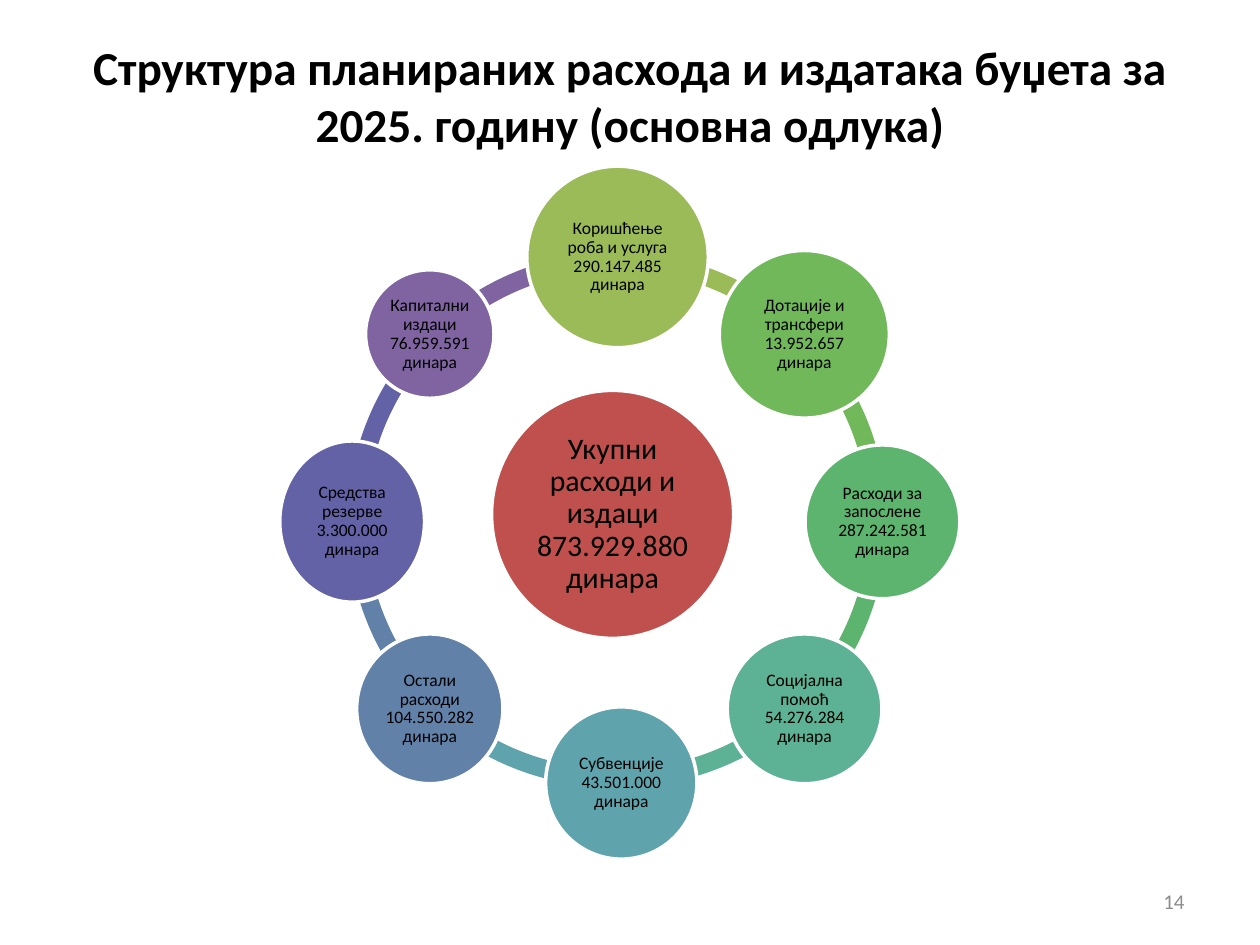
"""Build the slide with the ring of planned budget expenditures."""
from dataclasses import dataclass

from pptx import Presentation
from pptx.dml.color import RGBColor
from pptx.enum.shapes import MSO_SHAPE
from pptx.enum.text import MSO_ANCHOR, PP_ALIGN
from pptx.util import Cm, Pt

ELLIPSE = MSO_SHAPE.OVAL
BLOCK_ARC = MSO_SHAPE.BLOCK_ARC
MIDDLE = MSO_ANCHOR.MIDDLE
CENTER = PP_ALIGN.CENTER
RIGHT = PP_ALIGN.RIGHT

FONT = "Calibri"
BLACK = "000000"
WHITE = "FFFFFF"
GRAY = "8C8C8C"

RING_LEFT, RING_TOP, RING_SIZE = 7.01, 5.08, 10.87
RING_THICKNESS = 0.034
FULL_TURN = 216
FIRST_ANGLE = 162


@dataclass(frozen=True)
class Circle:
    """A labelled circle, measured in centimetres."""

    label: str
    color: str
    left: float
    top: float
    width: float
    height: float
    font_size: float = 10
    inset: float = 0.03


@dataclass(frozen=True)
class ArcFit:
    """Shift in centimetres and angles of an arc off the regular ring."""

    dx: float
    dy: float
    start: float
    end: float


TOTAL = Circle("Укупни расходи и издаци 873.929.880 динара", "C0504D",
               9.91, 7.87, 4.88, 5, 17, 0.05)
EXPENSES = [
    Circle("Коришћење роба и услуга 290.147.485 динара", "9BBB59", 10.62, 3.35, 3.66, 3.66),
    Circle("Дотације и трансфери 13.952.657 динара", "70B85A", 14.5, 5.05, 3.43, 3.38),
    Circle("Расходи за запослене 287.242.581 динара", "5CB46F", 16.23, 8.97, 3.12, 3.1),
    Circle("Социјална помоћ 54.276.284 динара", "5DB195", 14.66, 12.78, 3.12, 3.02),
    Circle("Субвенције 43.501.000 динара", "5FA4AD", 11, 14.25, 3.05, 3.07),
    Circle("Остали расходи 104.550.282 динара", "6181A9", 7.19, 12.78, 2.95, 3.02),
    Circle("Средства резерве 3.300.000 динара", "6362A6", 5.64, 8.89, 2.92, 3.25),
    Circle("Капитални издаци 76.959.591 динара", "8064A2", 7.37, 5.44, 2.59, 2.59),
]
ARC_FITS = {
    3: ArcFit(0.05, -0.08, 27.56, 53.88),
    4: ArcFit(-0.08, -0.08, 53.1, 80.46),
}


def rgb(color: str) -> RGBColor:
    """Return the colour for a hex string."""
    return RGBColor.from_string(color)


def write(frame, text: str, size: float, color: str = BLACK, align=CENTER, bold: bool = False):
    """Write one formatted paragraph and return it."""
    frame.text = text
    frame.word_wrap = True
    frame.vertical_anchor = MIDDLE
    paragraph = frame.paragraphs[0]
    paragraph.alignment = align
    font = paragraph.runs[0].font
    font.name, font.size, font.bold = FONT, Pt(size), bold
    font.color.rgb = rgb(color)
    return paragraph


def draw_arc(slide, index: int, color: str) -> None:
    """Draw the ring segment that follows the circle at index."""
    step = FULL_TURN / len(EXPENSES)
    start = (FIRST_ANGLE + index * step) % FULL_TURN
    fit = ARC_FITS.get(index, ArcFit(0, 0, start, (start + step) % FULL_TURN))
    arc = slide.shapes.add_shape(BLOCK_ARC, Cm(RING_LEFT + fit.dx), Cm(RING_TOP + fit.dy),
                                 Cm(RING_SIZE), Cm(RING_SIZE))
    for position, value in enumerate((fit.start, fit.end, RING_THICKNESS)):
        arc.adjustments[position] = value
    arc.shadow.inherit = False
    arc.fill.solid()
    arc.fill.fore_color.rgb = rgb(color)
    arc.line.fill.background()


def draw_circle(slide, circle: Circle) -> None:
    """Draw a white-rimmed circle with its label."""
    disc = slide.shapes.add_shape(ELLIPSE, Cm(circle.left), Cm(circle.top),
                                  Cm(circle.width), Cm(circle.height))
    disc.shadow.inherit = False
    disc.fill.solid()
    disc.fill.fore_color.rgb = rgb(circle.color)
    disc.line.color.rgb = rgb(WHITE)
    disc.line.width = Pt(2)
    frame = disc.text_frame
    frame.margin_left = frame.margin_right = Cm(circle.inset)
    frame.margin_top = frame.margin_bottom = Cm(circle.inset)
    write(frame, circle.label, circle.font_size).line_spacing = 0.9


def main() -> None:
    """Assemble and save the slide."""
    deck = Presentation()
    deck.slide_width, deck.slide_height = Cm(25.4), Cm(19.05)
    slide = deck.slides.add_slide(deck.slide_layouts[6])

    title = slide.shapes.add_textbox(Cm(1.27), Cm(0.74), Cm(22.86), Cm(2.36))
    write(title.text_frame,
          "Структура планираних расхода и издатака буџета за 2025. годину (основна одлука)",
          27, bold=True)

    for index, expense in reversed(list(enumerate(EXPENSES))):
        draw_arc(slide, index, expense.color)
    for circle in (TOTAL, *EXPENSES):
        draw_circle(slide, circle)

    page_number = slide.shapes.add_textbox(Cm(18.21), Cm(17.65), Cm(5.92), Cm(1.02))
    write(page_number.text_frame, "14", 12, GRAY, RIGHT)
    deck.save("out.pptx")


if __name__ == "__main__":
    main()
